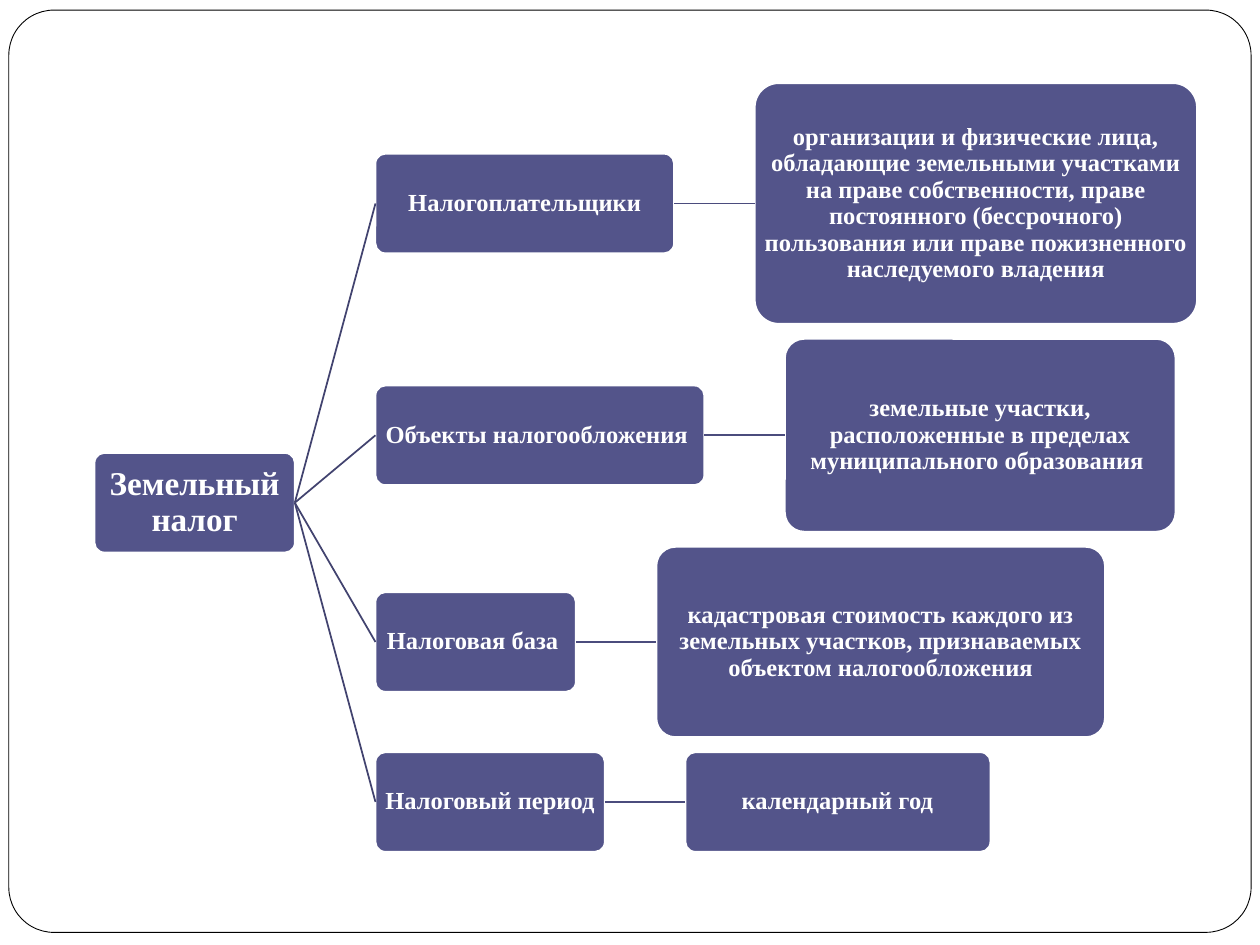
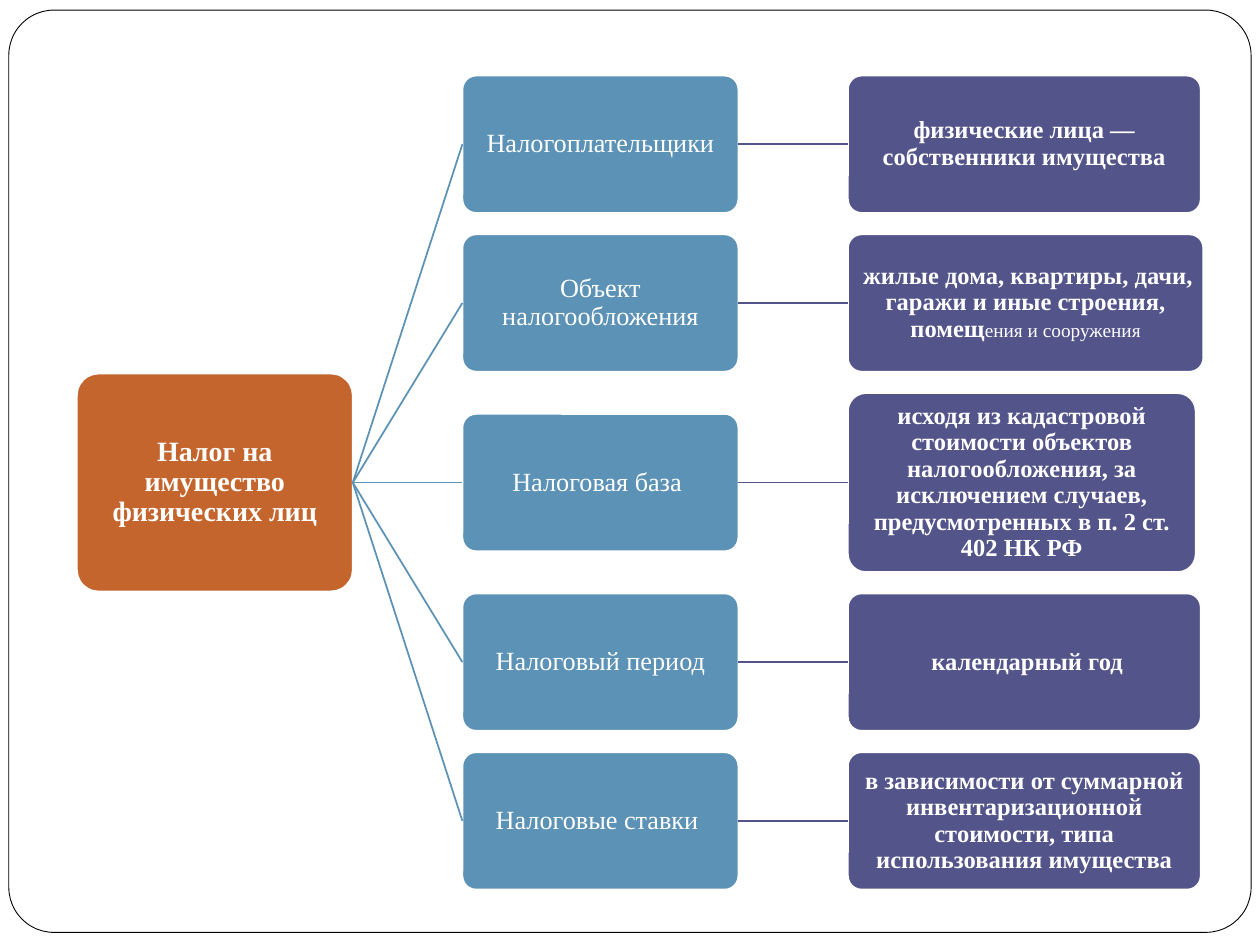
from lxml.etree import SubElement
from pptx import Presentation
from pptx.dml.color import RGBColor
from pptx.enum.shapes import MSO_CONNECTOR, MSO_SHAPE
from pptx.enum.text import MSO_ANCHOR, PP_ALIGN
from pptx.oxml.ns import qn
from pptx.util import Inches, Pt

COLORS = {
    "white": "FFFFFF", "black": "000000", "violet": "53548A", "dusk": "42436F",
    "plum": "4B4C7D", "blue": "5C92B5", "rust": "C4652D",
}
FONT = "Times New Roman"

# Rows hold: label, label width, leaf width, leaf height, leaf runs (text, size, bold)
trees = [
    {
        "root": ("Земельный налог", 19), "left": 0.75, "top": 0.66,
        "width": 1.59, "height": 0.79, "label height": 0.79,
        "gap": 0.64, "row gap": 0.12, "label font": (14, True),
        "fills": ("violet", "violet", "violet"), "lines": ("dusk", "plum"),
        "rows": [
            ("Налогоплательщики", 2.37, 3.51, 1.91, [
                ("организации и физические лица, обладающие земельными участками "
                 "на праве собственности, праве постоянного (бессрочного) "
                 "пользования или праве пожизненного наследуемого владения", 14, True)]),
            ("Объекты налогообложения ", 2.61, 3.1, 1.53, [
                ("земельные участки, расположенные в пределах "
                 "муниципального образования ", 14, True)]),
            ("Налоговая база ", 1.59, 3.56, 1.51, [
                ("кадастровая стоимость каждого из земельных участков, "
                 "признаваемых объектом налогообложения", 14, True)]),
            ("Налоговый период", 1.82, 2.42, 0.79, [
                (" ", 12, False), ("календарный год ", 14, True)]),
        ],
    },
    {
        "root": ("Налог на имущество физических лиц", 16), "left": 0.61, "top": 0.6,
        "width": 2.19, "height": 1.73, "label height": 1.09,
        "gap": 0.87, "row gap": 0.17, "label font": (15, False),
        "fills": ("rust", "blue", "violet"), "lines": ("blue", "violet"),
        "rows": [
            ("Налогоплательщики", 2.19, 2.8, 1.09, [
                ("физические лица — собственники имущества", 14, True)]),
            ("Объект налогообложения", 2.19, 2.82, 1.09, [
                (" ", 11, False),
                ("жилые дома, квартиры, дачи, гаражи и иные строения, помещ", 14, True),
                ("ения и сооружения", 11, False)]),
            ("Налоговая база ", 2.19, 2.76, 1.42, [
                ("исходя из кадастровой стоимости объектов налогообложения, "
                 "за исключением случаев, предусмотренных в п. 2 ст. 402 НК РФ", 14, True)]),
            ("Налоговый период", 2.19, 2.8, 1.09, [
                (" ", 13, False), ("календарный год", 14, True)]),
            ("Налоговые ставки ", 2.19, 2.8, 1.09, [
                ("в зависимости от суммарной инвентаризационной стоимости, "
                 "типа использования имущества", 14, True)]),
        ],
    },
]


def add_box(slide, left, mid, width, height, fill, runs, line="white", weight=1, round_by=0.1):
    """Draw a rounded box centred vertically on mid."""
    box = slide.shapes.add_shape(
        MSO_SHAPE.ROUNDED_RECTANGLE, Inches(left), Inches(mid - height / 2),
        Inches(width), Inches(height))
    box.adjustments[0] = round_by
    box.shadow.inherit = False
    box.fill.solid()
    box.fill.fore_color.rgb = RGBColor.from_string(COLORS[fill])
    box.line.color.rgb = RGBColor.from_string(COLORS[line])
    box.line.width = Pt(weight)
    frame = box.text_frame
    frame.word_wrap = True
    frame.vertical_anchor = MSO_ANCHOR.MIDDLE
    frame.margin_left = frame.margin_right = Inches(0.01)
    frame.margin_top = frame.margin_bottom = Inches(0.01)
    para = frame.paragraphs[0]
    para.alignment = PP_ALIGN.CENTER
    para.line_spacing = 0.9
    for text, size, bold in runs:
        run = para.add_run()
        run.text = text
        run.font.name = FONT
        run.font.size = Pt(size)
        run.font.bold = bold
        run.font.color.rgb = RGBColor.from_string(COLORS["white"])
    return box


def join(slide, start, end, color):
    """Link the right side of start to the left side of end."""
    link = slide.shapes.add_connector(MSO_CONNECTOR.STRAIGHT, 0, 0, 0, 0)
    link.begin_connect(start, 3)
    link.end_connect(end, 1)
    link.line.color.rgb = RGBColor.from_string(COLORS[color])
    link.line.width = Pt(1)
    SubElement(link._element.spPr, qn("a:effectLst"))


deck = Presentation()
deck.slide_width = Inches(10)
deck.slide_height = Inches(7.5)

for tree in trees:
    slide = deck.slides.add_slide(deck.slide_layouts[6])
    add_box(slide, 0.07, 3.74, 9.86, 7.32, "white", [], "black", 0.5, 0.049)

    mids = []
    top = tree["top"]
    for row in tree["rows"]:
        mids.append(top + row[3] / 2)
        top += row[3] + tree["row gap"]

    root_fill, label_fill, leaf_fill = tree["fills"]
    root_line, leaf_line = tree["lines"]
    text, size = tree["root"]
    root = add_box(slide, tree["left"], (mids[0] + mids[-1]) / 2, tree["width"],
                   tree["height"], root_fill, [(text, size, True)])

    label_left = tree["left"] + tree["width"] + tree["gap"]
    for mid, (name, width, leaf_width, leaf_height, runs) in zip(mids, tree["rows"]):
        label = add_box(slide, label_left, mid, width, tree["label height"],
                        label_fill, [(name, *tree["label font"])])
        leaf = add_box(slide, label_left + width + tree["gap"], mid, leaf_width,
                       leaf_height, leaf_fill, runs)
        join(slide, root, label, root_line)
        join(slide, label, leaf, leaf_line)

deck.save("out.pptx")
